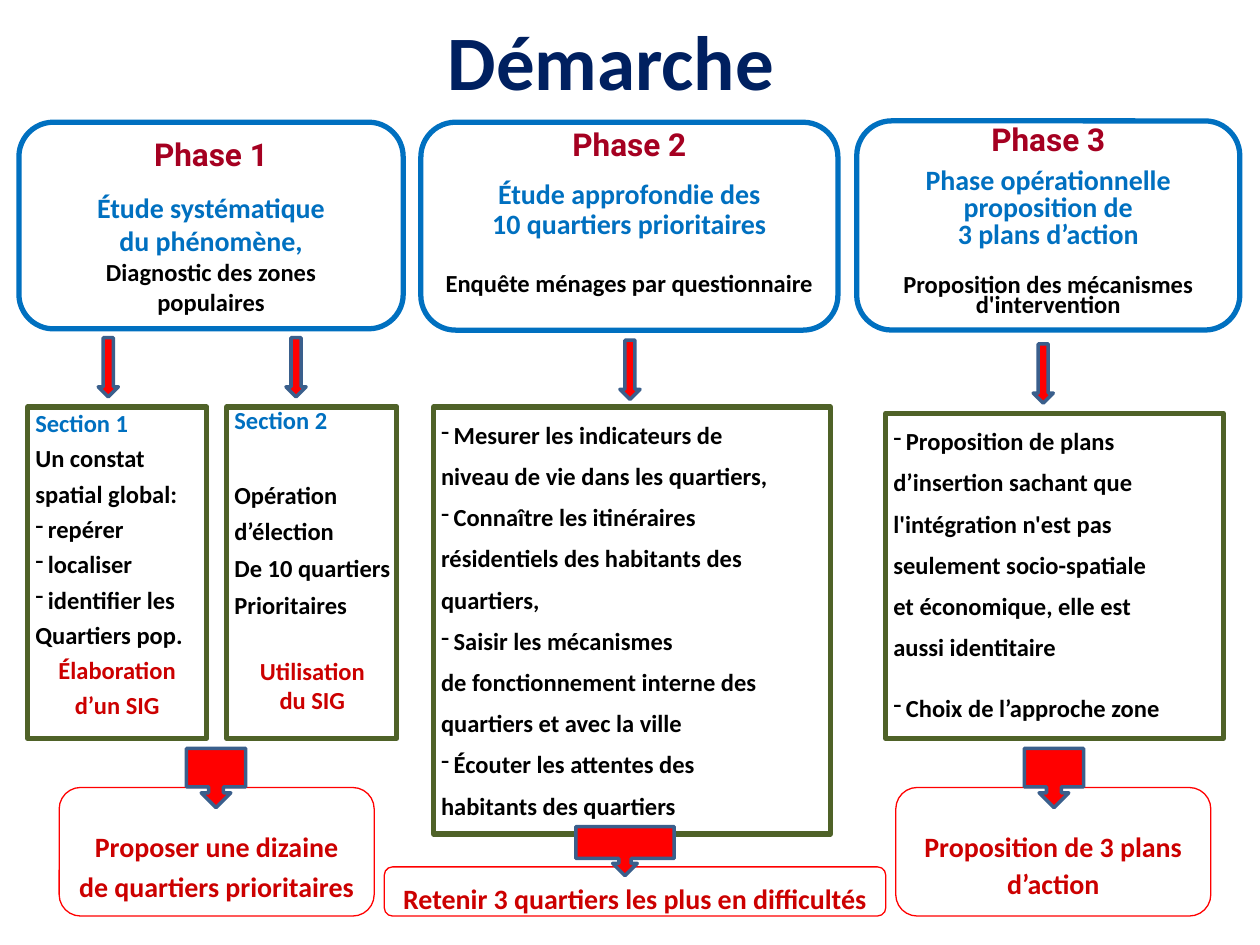
from dataclasses import dataclass

from lxml.etree import SubElement
from pptx import Presentation
from pptx.dml.color import RGBColor
from pptx.enum.shapes import MSO_SHAPE as SHAPE
from pptx.enum.text import MSO_ANCHOR as ANCHOR, PP_ALIGN as ALIGN
from pptx.oxml.ns import qn
from pptx.util import Inches, Pt


@dataclass(frozen=True)
class Theme:
    body: str = "Calibri"
    accent: str = "Roboto"
    navy: str = "002060"
    blue: str = "0070C0"
    wine: str = "A50021"
    black: str = "000000"
    crimson: str = "CC0000"
    red: str = "FF0000"
    green: str = "4F6228"
    steel: str = "3A5F8C"
    title: int = 44
    phase: int = 18
    lead: int = 16
    text: int = 14


T = Theme()
COLS, ROWS = 100, 75
CELL = Inches(10) // COLS
ARROW_W, ARROW_H = 1.6, 4.7


def rgb(value):
    return RGBColor.from_string(value)


def put(sp, box):
    """Place a shape on the grid: column, row, columns wide, rows high."""
    sp.left, sp.top, sp.width, sp.height = (round(v * CELL) for v in box)


def write(tf, text, first=False, size=T.text, color=T.black, font=T.body,
          align=ALIGN.LEFT, spacing=1.0, before=0, bullet=False):
    """Write one formatted paragraph."""
    p = tf.paragraphs[0] if first else tf.add_paragraph()
    p.alignment, p.line_spacing, p.space_before = align, spacing, Pt(before)
    if bullet:
        pPr = p._p.get_or_add_pPr()
        pPr.set("marL", str(Inches(0.1)))
        pPr.set("indent", str(-Inches(0.1)))
        SubElement(pPr, qn("a:buChar")).set("char", "-")
    r = p.add_run()
    r.text = text
    r.font.size, r.font.name, r.font.bold = Pt(size), font, True
    r.font.color.rgb = rgb(color)


def add_shape(slide, kind, box, line, width, fill=None):
    sp = slide.shapes.add_shape(kind, 0, 0, 0, 0)
    put(sp, box)
    sp.shadow.inherit = False
    sp.line.color.rgb, sp.line.width = rgb(line), Pt(width)
    if fill:
        sp.fill.solid()
        sp.fill.fore_color.rgb = rgb(fill)
    else:
        sp.fill.background()
    return sp


def fill_text(sp, lines, anchor, insets, **common):
    """Write (text, options) lines; common options hold for all of them."""
    tf = sp.text_frame
    tf.word_wrap, tf.vertical_anchor = False, anchor
    tf.margin_left, tf.margin_top, tf.margin_right, tf.margin_bottom = map(Inches, insets)
    for i, (text, options) in enumerate(lines):
        write(tf, text, first=i == 0, **{**common, **options})


def phase_card(slide, box, name, goal, method, gaps=(10, 0), heading=1.0,
               goal_spacing=1.0, method_spacing=1.0, bottom=0):
    sp = add_shape(slide, SHAPE.ROUNDED_RECTANGLE, box, T.blue, 3)
    lines = [(name, dict(size=T.phase, color=T.wine, font=T.accent, spacing=heading))]
    lines += [(t, dict(size=T.lead, color=T.blue, spacing=goal_spacing,
                       before=0 if i else gaps[0])) for i, t in enumerate(goal)]
    lines += [(t, dict(spacing=method_spacing, before=0 if i else gaps[1]))
              for i, t in enumerate(method)]
    fill_text(sp, lines, ANCHOR.MIDDLE, (0.1, 0, 0.1, bottom), align=ALIGN.CENTER)


def detail_box(slide, box, lines, **common):
    sp = add_shape(slide, SHAPE.RECTANGLE, box, T.green, 3)
    fill_text(sp, lines, ANCHOR.TOP, (0.06, 0.01, 0.06, 0.01), **common)


def outcome(slide, box, callout, lines, spacing):
    """Rounded result box with the arrow callout that leads into it."""
    sp = add_shape(slide, SHAPE.ROUNDED_RECTANGLE, box, T.red, 0.75)
    fill_text(sp, [(t, {}) for t in lines], ANCHOR.MIDDLE, (0.1, 0.18, 0.1, 0),
              size=T.lead, color=T.crimson, align=ALIGN.CENTER, spacing=spacing)
    add_shape(slide, SHAPE.DOWN_ARROW_CALLOUT, callout, T.steel, 2, T.red)


def down_arrow(slide, col, row):
    add_shape(slide, SHAPE.DOWN_ARROW, (col, row, ARROW_W, ARROW_H), T.steel, 2, T.red)


def title(slide, box, text):
    sp = slide.shapes.title
    put(sp, box)
    sp.text_frame.vertical_anchor = ANCHOR.MIDDLE
    write(sp.text_frame, text, first=True, size=T.title, color=T.navy, align=ALIGN.CENTER)


def phase_one(slide):
    phase_card(slide, (1.5, 9.7, 30.5, 16.4), "Phase 1",
               ["Étude systématique", "du phénomène,"],
               ["Diagnostic des zones", "populaires"])
    for col in (7.8, 22.7):
        down_arrow(slide, col, 26.8)
    head = dict(color=T.blue, spacing=1.0)
    tool = dict(color=T.crimson, align=ALIGN.CENTER)
    dash = dict(bullet=True)
    detail_box(slide, (2.2, 32.3, 14.2, 26.3), [
        ("Section 1", head), ("Un constat", {}), ("spatial global:", {}),
        ("repérer", dash), ("localiser", dash), ("identifier les", dash),
        ("Quartiers pop.", {}), ("Élaboration", tool), ("d’un SIG", tool)], spacing=1.2)
    plain = dict(spacing=1.0)
    detail_box(slide, (18, 32.3, 13.5, 26.3), [
        ("Section 2", {**head, "spacing": 0.9}), ("Opération", dict(before=24)),
        ("d’élection", {}), ("De 10 quartiers", {}), ("Prioritaires", {}),
        ("Utilisation", {**tool, **plain, "before": 21}),
        ("du SIG", {**tool, **plain, "before": 0})], spacing=1.1, before=2.5)
    outcome(slide, (4.7, 62.5, 25, 10.2), (14.8, 59.4, 4.7, 4.7),
            ["Proposer une dizaine", "de quartiers prioritaires"], 1.2)


def phase_two(slide):
    phase_card(slide, (33.4, 9.7, 33.1, 16.5), "Phase 2",
               ["Étude approfondie des", "10 quartiers prioritaires"],
               ["Enquête ménages par questionnaire"], gaps=(10, 17.5),
               goal_spacing=0.9, method_spacing=0.9, bottom=0.24)
    down_arrow(slide, 49.2, 27)
    dash = dict(bullet=True)
    detail_box(slide, (34.4, 32.3, 31.5, 33.9), [
        ("Mesurer les indicateurs de", dash), ("niveau de vie dans les quartiers,", {}),
        ("Connaître les itinéraires", dash), ("résidentiels des habitants des", {}),
        ("quartiers,", {}), ("Saisir les mécanismes", dash),
        ("de fonctionnement interne des", {}), ("quartiers et avec la ville", {}),
        ("Écouter les attentes des", dash), ("habitants des quartiers", {})],
        spacing=1.4, align=ALIGN.JUSTIFY)
    outcome(slide, (30.5, 68.8, 39.8, 3.9), (45.7, 65.6, 7.8, 3.9),
            ["Retenir 3 quartiers les plus en difficultés"], 0.7)


def phase_three(slide):
    phase_card(slide, (68, 9.6, 30.4, 16.6), "Phase 3",
               ["Phase opérationnelle", "proposition de", "3 plans d’action"],
               ["Proposition des mécanismes", "d'intervention"], gaps=(7, 15.5),
               heading=0.7, goal_spacing=0.8, method_spacing=0.7, bottom=0.02)
    down_arrow(slide, 82, 27.3)
    detail_box(slide, (70.3, 32.8, 26.8, 25.8), [
        ("Proposition de plans", dict(bullet=True)), ("d’insertion sachant que", {}),
        ("l'intégration n'est pas", {}), ("seulement socio-spatiale", {}),
        ("et économique, elle est", {}), ("aussi identitaire", {}),
        ("Choix de l’approche zone", dict(bullet=True, before=11.5))],
        spacing=1.4, align=ALIGN.JUSTIFY)
    outcome(slide, (71.1, 62.5, 25, 10.2), (81.3, 59.4, 4.7, 4.7),
            ["Proposition de 3 plans", "d’action"], 1.1)


def main():
    prs = Presentation()
    prs.slide_width, prs.slide_height = COLS * CELL, ROWS * CELL
    slide = prs.slides.add_slide(prs.slide_layouts[5])
    title(slide, (3.5, 0, 90, 9.4), "Démarche")
    for phase in (phase_one, phase_two, phase_three):
        phase(slide)
    prs.save("out.pptx")


if __name__ == "__main__":
    main()
